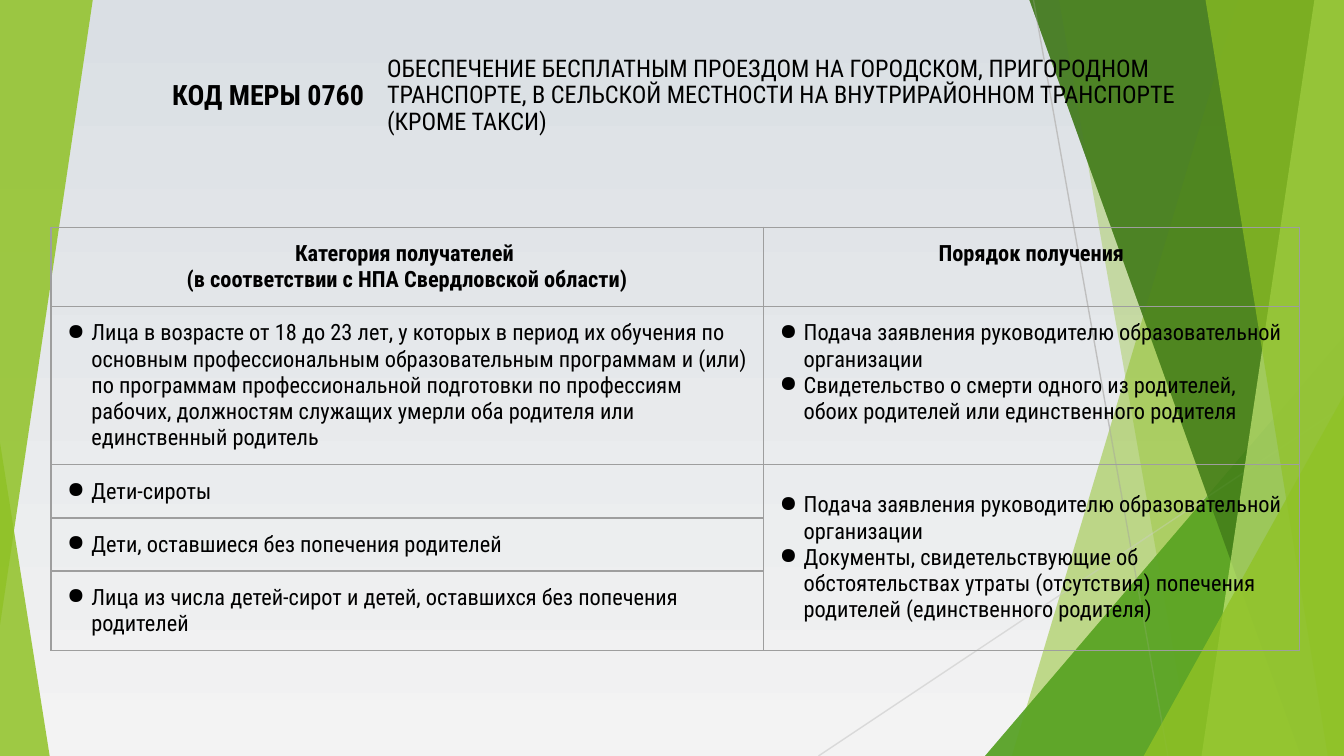
"""Builds a slide on free travel, with a table of recipients and procedures."""
import lxml.etree
import pptx
import pptx.dml.color
import pptx.enum.dml
import pptx.enum.shapes
import pptx.enum.text
import pptx.oxml.ns
import pptx.util

Inches = pptx.util.Inches
Pt = pptx.util.Pt
Align = pptx.enum.text.PP_ALIGN
Anchor = pptx.enum.text.MSO_ANCHOR
Shapes = pptx.enum.shapes.MSO_SHAPE
qn = pptx.oxml.ns.qn

WIDE = 10
HIGH = WIDE * 9 / 16
THEME = {
    "font": "Roboto Condensed", "ink": "000000", "grid": "9E9E9E",
    "back": ("DADFE4", "F3F3F3"), "lime": "90C226", "leaf": "54A021",
    "dark": "3F7819", "pale": "C0E474", "code": 15, "name": 13, "cell": 12,
    "rule": 0.75,
}

CODE = "КОД МЕРЫ 0760"
NAME = ("ОБЕСПЕЧЕНИЕ БЕСПЛАТНЫМ ПРОЕЗДОМ НА ГОРОДСКОМ, ПРИГОРОДНОМ ТРАНСПОРТЕ, "
        "В СЕЛЬСКОЙ МЕСТНОСТИ НА ВНУТРИРАЙОННОМ ТРАНСПОРТЕ (КРОМЕ ТАКСИ)")
APPLY = "Подача заявления руководителю образовательной организации"
ROWS = [
    (["Категория получателей ", "(в соответствии с НПА Свердловской области)"],
     ["Порядок получения"]),
    (["Лица в возрасте от 18 до 23 лет, у которых в период их обучения по основным "
      "профессиональным образовательным программам и (или) по программам "
      "профессиональной подготовки по профессиям рабочих, должностям служащих "
      "умерли оба родителя или единственный родитель"],
     [APPLY, "Свидетельство о смерти одного из родителей, обоих родителей "
             "или единственного родителя"]),
    (["Дети-сироты"],
     [APPLY, "Документы, свидетельствующие об обстоятельствах утраты (отсутствия) "
             "попечения родителей (единственного родителя)"]),
    (["Дети, оставшиеся без попечения родителей"], None),
    (["Лица из числа детей-сирот и детей, оставшихся без попечения родителей"], None),
]
COLS = (5.3, 3.99)
TALL = (0.59, 1.17, 0.39, 0.39, 0.59)

BANDS = [
    ("lime", 30, 9.21, 7.53),
    ("lime", 20, 7.88, 8.87),
    ("leaf", 72, 7.33, 2.5),
    ("dark", 70, 7.66, 9.68),
    ("pale", 70, 9.78, 8.94),
    ("lime", 65, 8.97, 9.88),
    ("lime", 80, 8.51, 2.94),
]
PEAKS = {2, 6}
LINES = [("BFBFBF", 7.69, 0, 8.69, HIGH), ("D9D9D9", WIDE, 3.02, 6.09, HIGH)]


def tint(code):
    return pptx.dml.color.RGBColor.from_string(code)


def paint(shape, hue, alpha):
    shape.shadow.inherit = False
    shape.fill.solid()
    shape.fill.fore_color.rgb = tint(THEME[hue])
    shape.line.fill.background()
    color = shape.element.spPr.find(".//" + qn("a:srgbClr"))
    lxml.etree.SubElement(color, qn("a:alpha"), val=str(alpha * 1000))


def peak(slide, hue, alpha, box, tip, turn=0):
    shape = slide.shapes.add_shape(Shapes.ISOSCELES_TRIANGLE, *map(Inches, box))
    shape.adjustments[0] = tip
    shape.rotation = turn
    paint(shape, hue, alpha)


def band(slide, hue, alpha, top, base):
    spots = [(WIDE, 0), (WIDE, HIGH), (base, HIGH)]
    pen = slide.shapes.build_freeform(Inches(top), 0)
    pen.add_line_segments([(Inches(x), Inches(y)) for x, y in spots], close=True)
    paint(pen.convert_to_shape(), hue, alpha)


def facets(slide):
    for place, (hue, alpha, first, last) in enumerate(BANDS):
        if place in PEAKS:
            peak(slide, hue, alpha, (first, last, WIDE - first, HIGH - last), 1)
        else:
            band(slide, hue, alpha, first, last)


def rule(slide, hue, *ends):
    line = slide.shapes.add_connector(
        pptx.enum.shapes.MSO_CONNECTOR.STRAIGHT, *map(Inches, ends))
    line.line.color.rgb = tint(hue)
    line.line.width = Pt(THEME["rule"])
    lxml.etree.SubElement(line.element.spPr, qn("a:effectLst"))


def style(para, size, bold=False, align=Align.LEFT):
    para.alignment = align
    font = para.font
    font.name, font.size, font.bold = THEME["font"], Pt(THEME[size]), bold
    font.color.rgb = tint(THEME["ink"])


def label(shape, text, box, pads, size, bold, align):
    shape.left, shape.top, shape.width, shape.height = map(Inches, box)
    frame = shape.text_frame
    frame.word_wrap = True
    frame.auto_size = pptx.enum.text.MSO_AUTO_SIZE.NONE
    frame.vertical_anchor = Anchor.MIDDLE
    frame.margin_left = frame.margin_right = Inches(pads[0])
    frame.margin_top = frame.margin_bottom = Inches(pads[1])
    frame.text = text
    para = frame.paragraphs[0]
    style(para, size, bold, align)
    return para


def bullet(para):
    props = para._p.get_or_add_pPr()
    props.set("marL", str(Inches(0.2)))
    props.set("indent", str(Inches(-0.18)))
    color = lxml.etree.SubElement(props, qn("a:buClr"))
    lxml.etree.SubElement(color, qn("a:srgbClr"), val=THEME["ink"])
    lxml.etree.SubElement(props, qn("a:buChar"), char="●")


def border(cell):
    props = cell._tc.get_or_add_tcPr()
    for place, side in enumerate(("lnL", "lnR", "lnT", "lnB")):
        line = lxml.etree.Element(qn("a:" + side), w=str(Pt(THEME["rule"])))
        fill = lxml.etree.SubElement(line, qn("a:solidFill"))
        lxml.etree.SubElement(fill, qn("a:srgbClr"), val=THEME["grid"])
        props.insert(place, line)


def write(cell, texts, head):
    cell.text_frame.text = "\n".join(texts)
    for para in cell.text_frame.paragraphs:
        if not head:
            bullet(para)
        style(para, "cell", head, Align.CENTER if head else Align.LEFT)


def grid(slide):
    box = (0.38, 1.69, sum(COLS), sum(TALL))
    table = slide.shapes.add_table(len(ROWS), len(COLS), *map(Inches, box)).table
    table.first_row = table.horz_banding = False
    for col, width in zip(table.columns, COLS):
        col.width = Inches(width)
    for place, (row, height) in enumerate(zip(table.rows, TALL)):
        row.height = Inches(height)
        for cell, texts in zip(row.cells, ROWS[place]):
            cell.margin_left = cell.margin_right = Inches(0.1)
            cell.margin_top = cell.margin_bottom = Inches(0.1)
            cell.fill.background()
            border(cell)
            if texts:
                write(cell, texts, place == 0)
    joint = table.cell(2, 1)
    joint.merge(table.cell(4, 1))
    joint.vertical_anchor = Anchor.MIDDLE


def main():
    deck = pptx.Presentation()
    deck.slide_width, deck.slide_height = Inches(WIDE), Inches(HIGH)
    slide = deck.slides.add_slide(deck.slide_layouts[5])
    back = slide.background.fill
    back.gradient()
    back.gradient_angle = 270
    for stop, hue in zip(back.gradient_stops, THEME["back"]):
        stop.color.rgb = tint(hue)

    facets(slide)
    peak(slide, "lime", 85, (0, 3.29, 0.37, HIGH - 3.29), 0)
    for line in LINES:
        rule(slide, *line)
    facets(slide)
    peak(slide, "lime", 85, (0, 0, 0.69, 4.65), 1, 180)
    grid(slide)

    box = (2.81, 0.33, 6.3, 0.77)
    name = slide.shapes.add_textbox(*map(Inches, box))
    para = label(name, NAME, box, (0.07, 0.04), "name", False, Align.LEFT)
    para.line_spacing = 0.9
    label(slide.shapes.title, CODE, (0.7, 0.32, 2.11, 0.77), (0.1, 0.1),
          "code", True, Align.RIGHT)
    deck.save("out.pptx")


if __name__ == "__main__":
    main()
